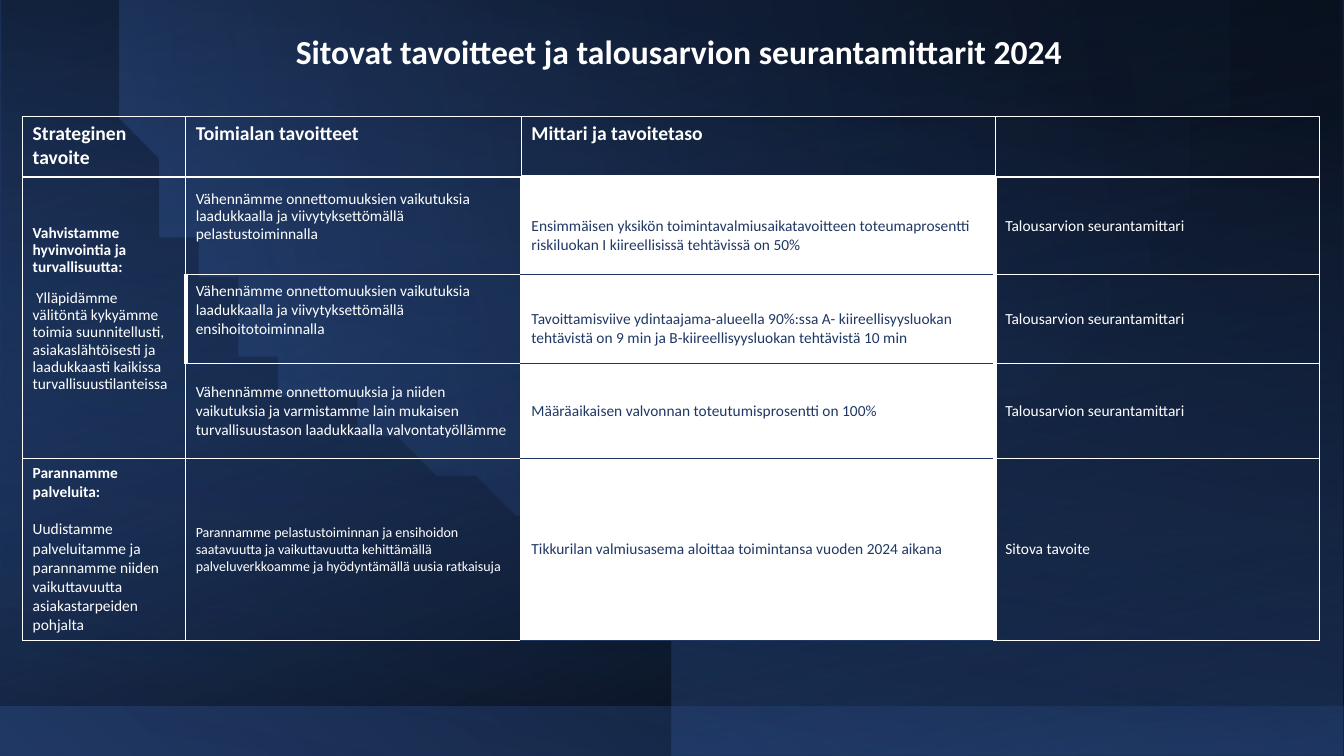
import dataclasses
import math
import typing

import lxml.etree
import pptx
import pptx.dml.color
import pptx.enum.shapes
import pptx.enum.text
import pptx.oxml.ns
import pptx.util

Cm = pptx.util.Cm
Pt = pptx.util.Pt
qn = pptx.oxml.ns.qn
Anchor = pptx.enum.text.MSO_ANCHOR


@dataclasses.dataclass(frozen=True)
class Theme:
    font: str = "Calibri"
    white: str = "FFFFFF"
    navy: str = "203864"
    black: str = "000000"
    blue: str = "2F5597"
    sky: str = "4472C4"
    title: int = 24
    head: int = 14
    body: int = 11
    small: int = 10


THEME = Theme()


class Stop(typing.NamedTuple):
    place: int
    tint: str
    alpha: int = 100


class Panel(typing.NamedTuple):
    box: tuple[float, float, float, float]
    stops: tuple[Stop, Stop]
    angle: int
    turn: int = 0
    flip: bool = True


class Para(typing.NamedTuple):
    text: str
    size: int = THEME.body
    bold: bool = False
    tint: str = THEME.white
    form: dict[str, typing.Any] = {}


class Edge(typing.NamedTuple):
    width: int = 1
    tint: str = THEME.white


class Entry(typing.NamedTuple):
    paras: list[Para]
    edges: dict[str, Edge] = {}
    fill: str = ""
    form: dict[str, typing.Any] = {}


PANELS = [
    Panel((0, 0, 33.87, 19.05), (Stop(0, THEME.navy), Stop(100, THEME.black)), 230),
    Panel((0, 0, 33.87, 17.78), (Stop(1, THEME.blue, 59), Stop(100, THEME.black)), 250, 180, False),
    Panel((7.4, -7.37, 19.05, 33.78), (Stop(13, THEME.navy, 0), Stop(99, THEME.black, 28)), 0, 90),
    Panel((16.93, 0, 16.93, 19.05), (Stop(13, THEME.navy, 0), Stop(99, THEME.blue, 50)), 100),
    Panel((0, 0, 33.83, 19.1), (Stop(13, THEME.black, 35), Stop(99, THEME.blue, 0)), 80),
]
DISC = (Stop(7, THEME.navy, 4), Stop(99, THEME.sky, 24))

COLS = [4.11, 8.46, 11.94, 8.18]
ROWS = [1.52, 2.46, 2.24, 2.39, 4.6]
HEADS = ["Strateginen tavoite", "Toimialan tavoitteet", "Mittari ja tavoitetaso", ""]
TIGHT = {"line_spacing": 0.9}
MID = {"vertical_anchor": Anchor.MIDDLE}
LIFT = MID | {"margin_bottom": Cm(0.58)}
DROP = MID | {"margin_top": Cm(0.6)}
THICK = Edge(3)
DARK = Edge(1, THEME.navy)


def apply(thing: typing.Any, form: dict[str, typing.Any]) -> None:
    for name, value in form.items():
        setattr(thing, name, value)


def rgb(tint: str) -> pptx.dml.color.RGBColor:
    return pptx.dml.color.RGBColor.from_string(tint)


def shade(shape: typing.Any, stops: tuple[Stop, Stop], angle: int) -> None:
    shape.shadow.inherit = False
    shape.line.fill.background()
    shape.fill.gradient()
    shape.fill.gradient_angle = (360 - angle) % 360
    for mark, stop in zip(shape.fill.gradient_stops, stops):
        mark.color.rgb = rgb(stop.tint)
        mark.position = stop.place / 100
    for node, stop in zip(shape._element.spPr.iter(qn("a:srgbClr")), stops):
        lxml.etree.SubElement(node, qn("a:alpha")).set("val", str(stop.alpha * 1000))


def add_panel(slide: typing.Any, panel: Panel) -> None:
    kind = pptx.enum.shapes.MSO_SHAPE.RECTANGLE
    shape = slide.shapes.add_shape(kind, *map(Cm, panel.box))
    shape.rotation = panel.turn
    if panel.flip:
        shape._element.spPr.find(qn("a:xfrm")).set("flipH", "1")
    shade(shape, panel.stops, panel.angle)


def add_disc(slide: typing.Any, x: float, y: float, size: float, steps: int = 90) -> None:
    start = math.asin(-y / size)
    sweep = math.pi - 2 * start
    angles = [start + sweep * step / steps for step in range(steps + 1)]
    points = [(x + size * math.cos(a), y + size * math.sin(a)) for a in angles]
    path = slide.shapes.build_freeform(*points[0], scale=Cm(1))
    path.add_line_segments(points[1:], close=True)
    shade(path.convert_to_shape(), DISC, 170)


def write(frame: typing.Any, paras: list[Para]) -> None:
    for index, para in enumerate(paras):
        line = frame.add_paragraph() if index else frame.paragraphs[0]
        apply(line, {"alignment": pptx.enum.text.PP_ALIGN.LEFT} | para.form)
        run = line.add_run()
        run.text = para.text
        apply(run.font, {"name": THEME.font, "size": Pt(para.size), "bold": para.bold})
        run.font.color.rgb = rgb(para.tint)


def fill_cell(cell: typing.Any, entry: Entry) -> None:
    write(cell.text_frame, entry.paras)
    apply(cell, entry.form)
    props = cell._tc.get_or_add_tcPr()
    for side in "LRTB":
        edge = entry.edges.get(side, Edge())
        line = lxml.etree.SubElement(props, qn(f"a:ln{side}"), w=str(Pt(edge.width)))
        solid = lxml.etree.SubElement(line, qn("a:solidFill"))
        lxml.etree.SubElement(solid, qn("a:srgbClr"), val=edge.tint)
    if entry.fill:
        cell.fill.solid()
        cell.fill.fore_color.rgb = rgb(entry.fill)
    else:
        cell.fill.background()


def goal(text: str, form: dict, size: int = THEME.body, left: Edge = Edge(), style: dict = {}) -> Entry:
    return Entry([Para(text, size, form=style)], {"L": left, "R": THICK}, form=form)


def gauge(text: str, form: dict, top: Edge = DARK) -> Entry:
    edges = {"L": THICK, "R": THICK, "T": top, "B": DARK}
    return Entry([Para(text, tint=THEME.navy)], edges, THEME.white, form)


def status(text: str) -> Entry:
    return Entry([Para(text)], {"L": THICK}, form=MID)


def entries() -> list[list[Entry]]:
    head = [Entry([Para(text, THEME.head, True)] if text else [],
                  {"B": THICK} if col == 2 else {}) for col, text in enumerate(HEADS)]
    track = status("Talousarvion seurantamittari")
    safe = Entry([
        Para("Vahvistamme hyvinvointia ja turvallisuutta:", bold=True, form=TIGHT),
        Para(" Ylläpidämme välitöntä kykyämme toimia suunnitellusti, asiakaslähtöisesti ja laadukkaasti kaikissa turvallisuustilanteissa",
             form=TIGHT | {"space_before": Pt(10)})], form=LIFT)
    serve = Entry([
        Para("Parannamme palveluita:", bold=True),
        Para("Uudistamme palveluitamme ja parannamme niiden vaikuttavuutta asiakastarpeiden pohjalta",
             form={"space_before": Pt(13.4)})])
    return [
        head,
        [safe,
         goal("Vähennämme onnettomuuksien vaikutuksia laadukkaalla ja viivytyksettömällä pelastustoiminnalla", LIFT, style=TIGHT),
         gauge("Ensimmäisen yksikön toimintavalmiusaikatavoitteen toteumaprosentti riskiluokan I kiireellisissä tehtävissä on 50%", DROP, Edge()),
         track],
        [Entry([]),
         goal("Vähennämme onnettomuuksien vaikutuksia laadukkaalla ja viivytyksettömällä ensihoitotoiminnalla", LIFT, left=THICK),
         gauge("Tavoittamisviive ydintaajama-alueella 90%:ssa A- kiireellisyysluokan tehtävistä on 9 min ja B-kiireellisyysluokan tehtävistä 10 min", DROP),
         track],
        [Entry([]),
         goal("Vähennämme onnettomuuksia ja niiden vaikutuksia ja varmistamme lain mukaisen turvallisuustason laadukkaalla valvontatyöllämme", MID),
         gauge("Määräaikaisen valvonnan toteutumisprosentti on 100%", MID),
         track],
        [serve,
         goal("Parannamme pelastustoiminnan ja ensihoidon saatavuutta ja vaikuttavuutta kehittämällä palveluverkkoamme ja hyödyntämällä uusia ratkaisuja", MID, THEME.small),
         gauge("Tikkurilan valmiusasema aloittaa toimintansa vuoden 2024 aikana", MID),
         status("Sitova tavoite")],
    ]


def add_grid(slide: typing.Any) -> None:
    box = map(Cm, (0.57, 2.94, sum(COLS), sum(ROWS)))
    grid = slide.shapes.add_table(len(ROWS), len(COLS), *box).table
    apply(grid, {"first_row": False, "horz_banding": False})
    for col, width in zip(grid.columns, COLS):
        col.width = Cm(width)
    for row, height, line in zip(grid.rows, ROWS, entries()):
        row.height = Cm(height)
        for cell, entry in zip(row.cells, line):
            fill_cell(cell, entry)
    grid.cell(1, 0).merge(grid.cell(3, 0))


def set_title(slide: typing.Any) -> None:
    title = slide.shapes.title
    apply(title, {"left": Cm(7.2), "top": Cm(0.64), "width": Cm(20.42), "height": Cm(1.28)})
    apply(title.text_frame, {"word_wrap": True, "vertical_anchor": Anchor.TOP,
                             "auto_size": pptx.enum.text.MSO_AUTO_SIZE.NONE})
    write(title.text_frame, [Para("Sitovat tavoitteet ja talousarvion seurantamittarit 2024", THEME.title, True)])
    slide.shapes._spTree.append(title._element)


def main() -> None:
    deck = pptx.Presentation()
    apply(deck, {"slide_width": Cm(33.87), "slide_height": Cm(19.05)})
    slide = deck.slides.add_slide(deck.slide_layouts[5])
    for panel in PANELS:
        add_panel(slide, panel)
    add_disc(slide, 16.93, -1.07, 14.23)
    add_grid(slide)
    set_title(slide)
    deck.save("out.pptx")


if __name__ == "__main__":
    main()
